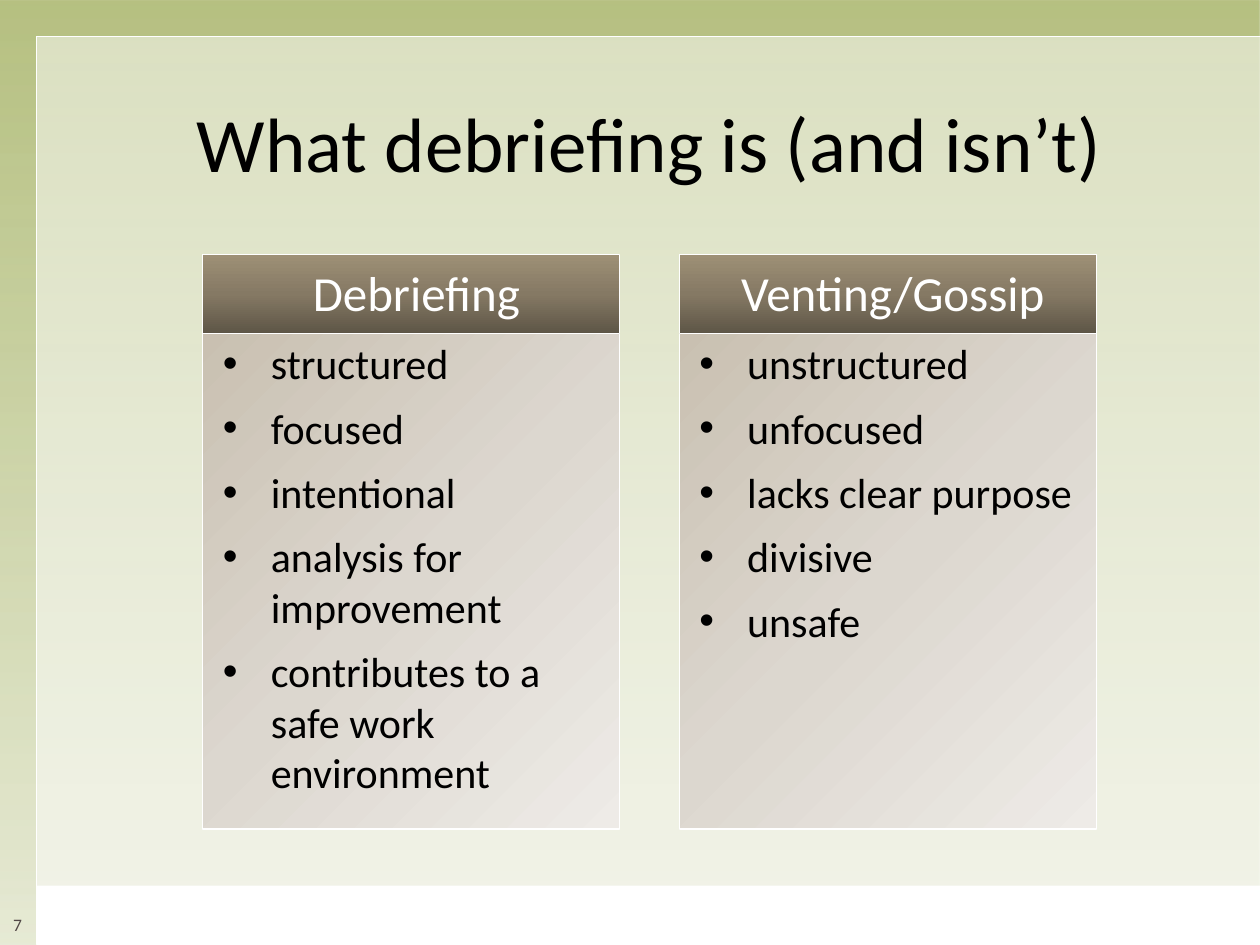
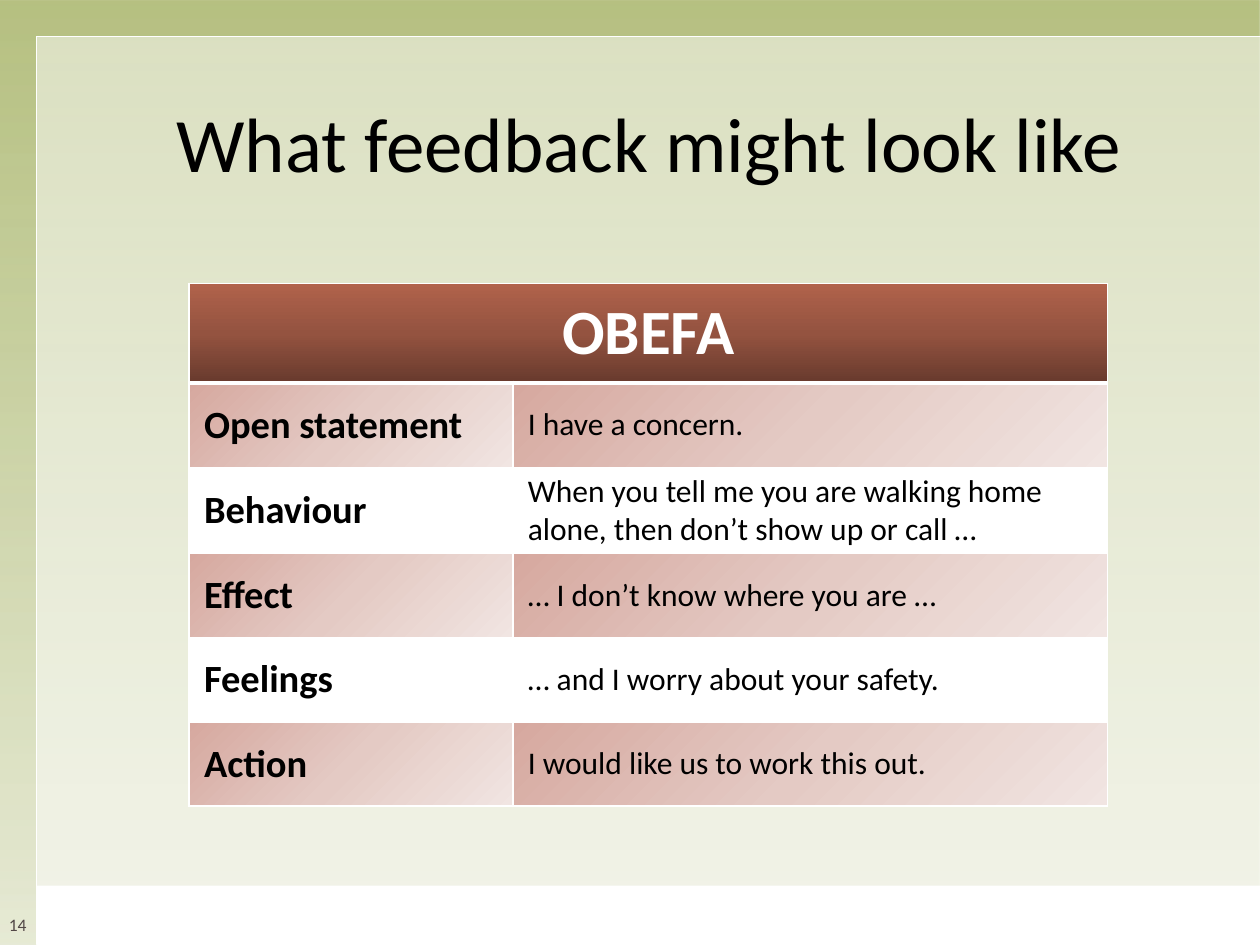
"""Two training slides: debriefing compared with venting, and the OBEFA feedback table."""
from dataclasses import dataclass

from lxml import etree
from pptx import Presentation
from pptx import util as u
from pptx.dml import color
from pptx.enum import shapes, text
from pptx.oxml import ns

FONT = "Calibri"
WHITE, BLACK, GREEN, GREY = "FFFFFF", "000000", "9EAC58", "514746"
CENTER, LEFT = text.PP_ALIGN.CENTER, text.PP_ALIGN.LEFT
TOP, MIDDLE, BOTTOM = text.MSO_ANCHOR.TOP, text.MSO_ANCHOR.MIDDLE, text.MSO_ANCHOR.BOTTOM


@dataclass(frozen=True)
class Fill:
    """A solid fill (one colour) or an even gradient, with opacity in percent."""
    colors: tuple[str, ...]
    alphas: tuple[int, ...] = (100, 100, 100)
    angle: int = 0


@dataclass(frozen=True)
class Style:
    """Type settings and placement of text within its box."""
    size: float
    color: str = BLACK
    bold: bool = False
    align: text.PP_ALIGN = LEFT
    anchor: text.MSO_ANCHOR = MIDDLE
    insets: tuple[float, ...] = (0.1, 0.05, 0.1, 0.05)
    bullets: bool = False


@dataclass(frozen=True)
class Column:
    """One side of the comparison."""
    heading: str
    points: tuple[str, ...]


SOLID_WHITE = Fill((WHITE,))
BACKDROP = Fill((GREEN,) * 3, (75, 50, 25), 90)
VEIL = Fill((WHITE,), (50,))
PANEL = Fill(("C9C0B1", "DCD7CF", "EEEBE7"), angle=45)
HEADING = Fill(("5D5546", "857964", "9E9076"), angle=270)
TABLE_HEAD = Fill(("683A2D", "945340", "B0624B"), angle=270)
TABLE_BAND = Fill(("D6A89F", "E4CAC4", "F1E5E2"), angle=45)

PANEL_INSETS = (0.16, 0.04, 0.08, 0.08)
CELL_INSETS = (0.12, 0.04, 0.12, 0.04)
TITLE = Style(44, align=CENTER)
NUMBER = Style(10, GREY, align=CENTER, anchor=BOTTOM, insets=(0, 0.04, 0, 0.08))
HEADING_TEXT = Style(28, WHITE, align=CENTER, insets=PANEL_INSETS)
POINTS_TEXT = Style(24, anchor=TOP, insets=PANEL_INSETS, bullets=True)
TABLE_TITLE = Style(36, WHITE, True, CENTER, insets=(0.12, 0.08, 0.12, 0.08))
ROW_LABEL = Style(22, bold=True, insets=CELL_INSETS)
ROW_TEXT = Style(18, insets=CELL_INSETS)

COLUMNS = (
    Column("Debriefing", ("structured", "focused", "intentional", "analysis for improvement",
                          "contributes to a safe work environment")),
    Column("Venting/Gossip", ("unstructured", "unfocused", "lacks clear purpose",
                              "divisive", "unsafe")),
)
STEPS = (
    ("Open statement", "I have a concern."),
    ("Behaviour", "When you tell me you are walking home alone, then don’t show up or call …"),
    ("Effect", "… I don’t know where you are …"),
    ("Feelings", "… and I worry about your safety."),
    ("Action", "I would like us to work this out."),
)


def rgb(value: str) -> color.RGBColor:
    """Turn a hex string into a colour."""
    return color.RGBColor.from_string(value)


def add_color(parent, value: str, alpha: int = 100) -> None:
    """Append a colour element with its opacity."""
    clr = etree.SubElement(parent, ns.qn("a:srgbClr"), val=value)
    if alpha < 100:
        etree.SubElement(clr, ns.qn("a:alpha"), val=str(alpha * 1000))


def paint(target, props, fill: Fill) -> None:
    """Fill a shape or cell whose properties element is given."""
    target.fill.solid()
    solid = props.find(ns.qn("a:solidFill"))
    if len(fill.colors) == 1:
        add_color(solid, fill.colors[0], fill.alphas[0])
        return
    grad = etree.Element(ns.qn("a:gradFill"), rotWithShape="1")
    stops = etree.SubElement(grad, ns.qn("a:gsLst"))
    for i, (value, alpha) in enumerate(zip(fill.colors, fill.alphas)):
        stop = etree.SubElement(stops, ns.qn("a:gs"), pos=str(i * 50000))
        add_color(stop, value, alpha)
    etree.SubElement(grad, ns.qn("a:lin"), ang=str(fill.angle * 60000), scaled="0")
    props.replace(solid, grad)


def write(tf, lines: tuple[str, ...], style: Style) -> None:
    """Write and format one paragraph per line."""
    tf.text = "\n".join(lines)
    for p in tf.paragraphs:
        p.alignment = style.align
        if style.bullets:
            pPr = p._p.get_or_add_pPr()
            pPr.set("marL", str(u.Inches(0.38)))
            pPr.set("indent", str(u.Inches(-0.38)))
            etree.SubElement(pPr, ns.qn("a:buFont"), typeface="Arial")
            etree.SubElement(pPr, ns.qn("a:buChar"), char="•")
            p.space_after = u.Pt(8)
        for r in p.runs:
            r.font.name, r.font.size, r.font.bold = FONT, u.Pt(style.size), style.bold
            r.font.color.rgb = rgb(style.color)


def place_text(sp, lines: tuple[str, ...], style: Style) -> None:
    """Put styled text in a shape or text box."""
    tf = sp.text_frame
    tf.word_wrap = True
    tf.vertical_anchor = style.anchor
    tf.margin_left, tf.margin_top, tf.margin_right, tf.margin_bottom = map(u.Inches, style.insets)
    write(tf, lines, style)


def add_box(s, at: tuple[float, ...], fill: Fill, line: float = 0):
    """Add a rectangle, with a white outline if a line width is given."""
    sp = s.shapes.add_shape(shapes.MSO_SHAPE.RECTANGLE, *map(u.Inches, at))
    sp.shadow.inherit = False
    paint(sp, sp.element.spPr, fill)
    if line:
        sp.line.color.rgb = rgb(WHITE)
        sp.line.width = u.Pt(line)
    else:
        sp.line.fill.background()
    return sp


def add_text(s, at: tuple[float, ...], content: str, style: Style) -> None:
    """Add a text box."""
    place_text(s.shapes.add_textbox(*map(u.Inches, at)), (content,), style)


def add_slide(prs, title: str, number: int):
    """Add a slide with the shared frame, number and title."""
    s = prs.slides.add_slide(prs.slide_layouts[6])
    add_box(s, (-0.01, 0, 10.01, 7.5), BACKDROP)
    add_box(s, (0.29, 0.29, 9.72, 7.2), VEIL, 1)
    add_box(s, (0.29, 7.03, 9.72, 0.47), SOLID_WHITE)
    add_text(s, (0, 7.03, 0.28, 0.47), str(number), NUMBER)
    add_text(s, (0.58, 0.5, 9.15, 1.25), title, TITLE)
    return s


def add_column(s, left: float, column: Column) -> None:
    """Add a panel of points under its heading."""
    panel = add_box(s, (left, 2.64, 3.31, 3.94), PANEL, 0.75)
    place_text(panel, column.points, POINTS_TEXT)
    heading = add_box(s, (left, 2.02, 3.31, 0.63), HEADING, 0.75)
    place_text(heading, (column.heading,), HEADING_TEXT)


def format_cell(cell, content: str, style: Style, fill: Fill, bottom: float = 1) -> None:
    """Write a table cell and give it white borders and a fill."""
    cell.vertical_anchor = style.anchor
    (cell.margin_left, cell.margin_top,
     cell.margin_right, cell.margin_bottom) = map(u.Inches, style.insets)
    write(cell.text_frame, (content,), style)
    tcPr = cell._tc.get_or_add_tcPr()
    for side, width in (("L", 1), ("R", 1), ("T", 1), ("B", bottom)):
        ln = etree.SubElement(tcPr, ns.qn(f"a:ln{side}"), w=str(u.Pt(width)))
        add_color(etree.SubElement(ln, ns.qn("a:solidFill")), WHITE)
    paint(cell, tcPr, fill)


def add_steps_table(s) -> None:
    """Add the OBEFA table with alternating rows."""
    at = map(u.Inches, (1.5, 2.25, 7.29, 4.14))
    table = s.shapes.add_table(len(STEPS) + 1, 2, *at).table
    table.first_row = table.horz_banding = False
    for col, width in zip(table.columns, (2.57, 4.72)):
        col.width = u.Inches(width)
    for i, row in enumerate(table.rows):
        row.height = u.Inches(0.67 if i else 0.79)
    table.cell(0, 0).merge(table.cell(0, 1))
    for j, content in enumerate(("OBEFA", "")):
        format_cell(table.cell(0, j), content, TABLE_TITLE, TABLE_HEAD, 3)
    for i, step in enumerate(STEPS, 1):
        fill = TABLE_BAND if i % 2 else SOLID_WHITE
        for j, style in enumerate((ROW_LABEL, ROW_TEXT)):
            format_cell(table.cell(i, j), step[j], style, fill)


def main() -> None:
    """Build and save the presentation."""
    prs = Presentation()
    prs.slide_width, prs.slide_height = u.Inches(10), u.Inches(7.5)
    s = add_slide(prs, "What debriefing is (and isn’t)", 7)
    for i, column in enumerate(COLUMNS):
        add_column(s, 1.61 + i * 3.78, column)
    add_steps_table(add_slide(prs, "What feedback might look like", 14))
    prs.save("out.pptx")


if __name__ == "__main__":
    main()
